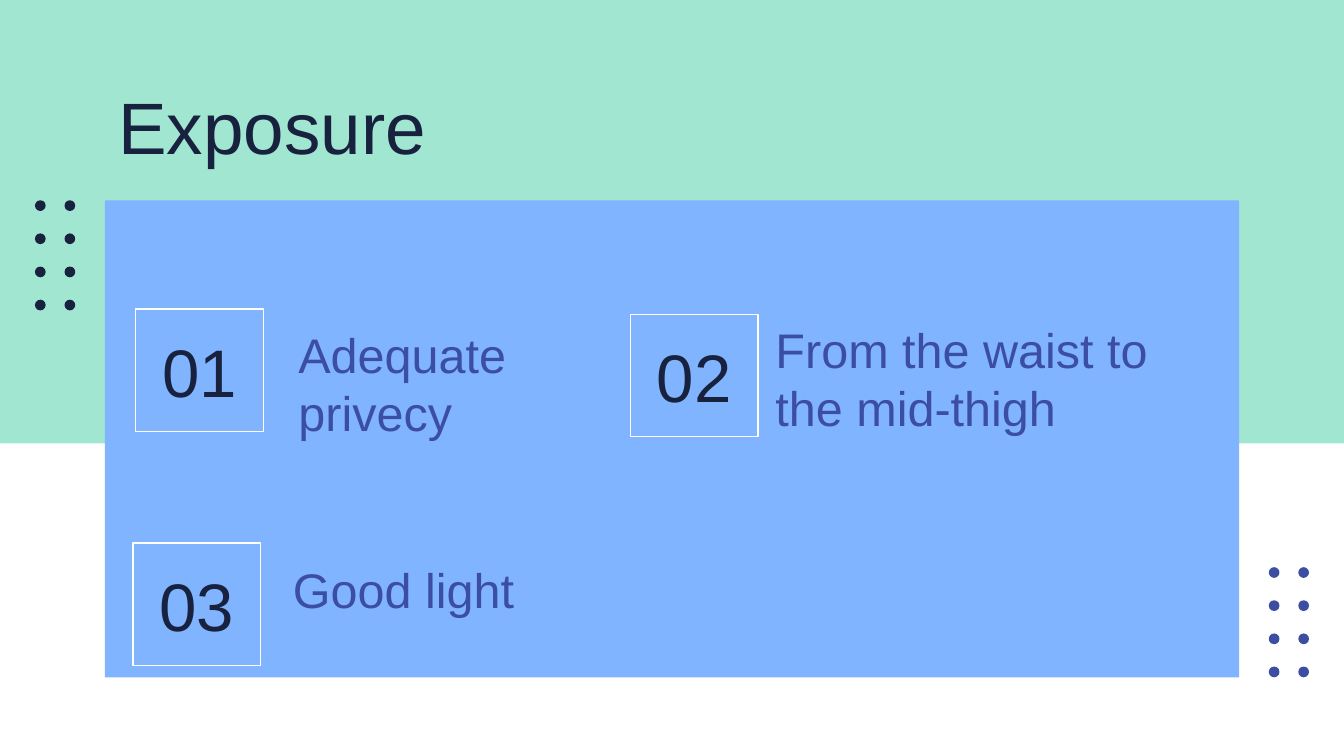
"""Build the Exposure slide with three numbered points."""
from dataclasses import dataclass

from lxml import etree
from pptx import Presentation
from pptx.dml.color import RGBColor
from pptx.enum.shapes import MSO_SHAPE
from pptx.enum.text import MSO_ANCHOR, MSO_AUTO_SIZE, PP_ALIGN
from pptx.oxml.ns import qn
from pptx.util import Inches, Pt

RECTANGLE, OVAL = MSO_SHAPE.RECTANGLE, MSO_SHAPE.OVAL
TOP, MIDDLE = MSO_ANCHOR.TOP, MSO_ANCHOR.MIDDLE
LEFT, CENTER = PP_ALIGN.LEFT, PP_ALIGN.CENTER
NO_AUTOFIT = MSO_AUTO_SIZE.NONE
COMPARISON_LAYOUT = 4


@dataclass(frozen=True)
class Theme:
    """Colours, font and type sizes of the slide."""
    mint: str = "A1E6D1"
    white: str = "FFFFFF"
    panel: str = "80B4FF"
    navy: str = "18223F"
    indigo: str = "3C4EA2"
    font: str = "Arial"
    title_size: float = 39
    number_size: float = 36
    point_size: float = 26


@dataclass(frozen=True)
class Box:
    """Position and size in inches."""
    left: float
    top: float
    width: float
    height: float


@dataclass(frozen=True)
class Point:
    """A numbered point with its number square and text box."""
    number: str
    text: str
    square: Box
    text_box: Box


@dataclass(frozen=True)
class DotGrid:
    """Top left corner and colour of a grid of dots."""
    left: float
    top: float
    color: str


THEME = Theme()
SQUARE_WIDTH, SQUARE_HEIGHT = 0.95, 0.91
DOT_SIZE, DOT_COLUMNS, DOT_ROWS = 0.08, 2, 4
DOT_COLUMN_STEP, DOT_ROW_STEP = 0.22, 0.74 / (DOT_ROWS - 1)
SLIDE_WIDTH = 10
SLIDE_HEIGHT = SLIDE_WIDTH * 9 / 16
STRIP_TOP = 3.3
INSET = 0.1

POINTS = (
    Point("01", "Adequate privecy", Box(1.01, 2.3, SQUARE_WIDTH, SQUARE_HEIGHT), Box(2.12, 2.32, 2.77, 0.91)),
    Point("02", "From the waist to the mid-thigh", Box(4.69, 2.34, SQUARE_WIDTH, SQUARE_HEIGHT),
          Box(5.67, 2.28, 3.26, 1.42)),
    Point("03", "Good light", Box(0.99, 4.04, SQUARE_WIDTH, SQUARE_HEIGHT), Box(2.08, 4.07, 2.77, 0.91)),
)
DOT_GRIDS = (DotGrid(0.26, 1.49, THEME.navy), DotGrid(9.44, 4.22, THEME.indigo))


def add_preset(slide, kind, box: Box, fill: str | None = None, line: str | None = None):
    """Add a preset shape with an optional fill and outline."""
    shape = slide.shapes.add_shape(kind, Inches(box.left), Inches(box.top), Inches(box.width), Inches(box.height))
    shape.shadow.inherit = False
    if fill:
        shape.fill.solid()
        shape.fill.fore_color.rgb = RGBColor.from_string(fill)
    else:
        shape.fill.background()
    if line:
        shape.line.color.rgb = RGBColor.from_string(line)
        shape.line.width = Pt(0.75)
    else:
        shape.line.fill.background()
    return shape


def write_text(shape, text: str, *, size: float, color: str, align=LEFT, anchor=TOP) -> None:
    """Write one unbulleted paragraph into a shape."""
    frame = shape.text_frame
    frame.text = text
    frame.word_wrap = True
    frame.auto_size = NO_AUTOFIT
    frame.vertical_anchor = anchor
    frame.margin_left = frame.margin_right = Inches(INSET)
    frame.margin_top = frame.margin_bottom = Inches(INSET)
    paragraph = frame.paragraphs[0]
    paragraph.alignment = align
    paragraph.line_spacing = 1.0
    paragraph.space_before = Pt(0)
    properties = paragraph._p.get_or_add_pPr()
    properties.set("marL", "0")
    properties.set("indent", "0")
    etree.SubElement(properties, qn("a:buNone"))
    font = paragraph.runs[0].font
    font.name, font.size, font.bold = THEME.font, Pt(size), False
    font.color.rgb = RGBColor.from_string(color)


def place_in_front(slide, placeholder, box: Box) -> None:
    """Move a placeholder to its box, above the shapes drawn so far."""
    placeholder.left, placeholder.top = Inches(box.left), Inches(box.top)
    placeholder.width, placeholder.height = Inches(box.width), Inches(box.height)
    slide.shapes.element.append(placeholder.element)


def draw_dots(slide, grid: DotGrid) -> None:
    """Draw a grid of small dots."""
    for row in range(DOT_ROWS):
        for column in range(DOT_COLUMNS):
            box = Box(grid.left + column * DOT_COLUMN_STEP, grid.top + row * DOT_ROW_STEP, DOT_SIZE, DOT_SIZE)
            add_preset(slide, OVAL, box, fill=grid.color)


def draw_point(slide, point: Point, placeholder) -> None:
    """Draw a number square and the text beside it."""
    square = add_preset(slide, RECTANGLE, point.square, line=THEME.white)
    write_text(square, point.number, size=THEME.number_size, color=THEME.navy, align=CENTER, anchor=MIDDLE)
    place_in_front(slide, placeholder, point.text_box)
    write_text(placeholder, point.text, size=THEME.point_size, color=THEME.indigo)


def main() -> None:
    """Build and save the presentation."""
    presentation = Presentation()
    presentation.slide_width, presentation.slide_height = Inches(SLIDE_WIDTH), Inches(SLIDE_HEIGHT)
    slide = presentation.slides.add_slide(presentation.slide_layouts[COMPARISON_LAYOUT])
    slide.background.fill.solid()
    slide.background.fill.fore_color.rgb = RGBColor.from_string(THEME.mint)
    title, *bodies = list(slide.placeholders)

    add_preset(slide, RECTANGLE, Box(0, STRIP_TOP, SLIDE_WIDTH, SLIDE_HEIGHT - STRIP_TOP), fill=THEME.white)
    add_preset(slide, RECTANGLE, Box(0.78, 1.49, 8.44, 3.55), fill=THEME.panel)
    for grid in DOT_GRIDS:
        draw_dots(slide, grid)

    place_in_front(slide, title, Box(0.78, 0.51, 8.44, 0.67))
    write_text(title, "Exposure", size=THEME.title_size, color=THEME.navy)
    for point, placeholder in zip(POINTS, bodies):
        draw_point(slide, point, placeholder)
    for unused in bodies[len(POINTS):]:
        slide.shapes.element.remove(unused.element)
    presentation.save("out.pptx")


if __name__ == "__main__":
    main()
